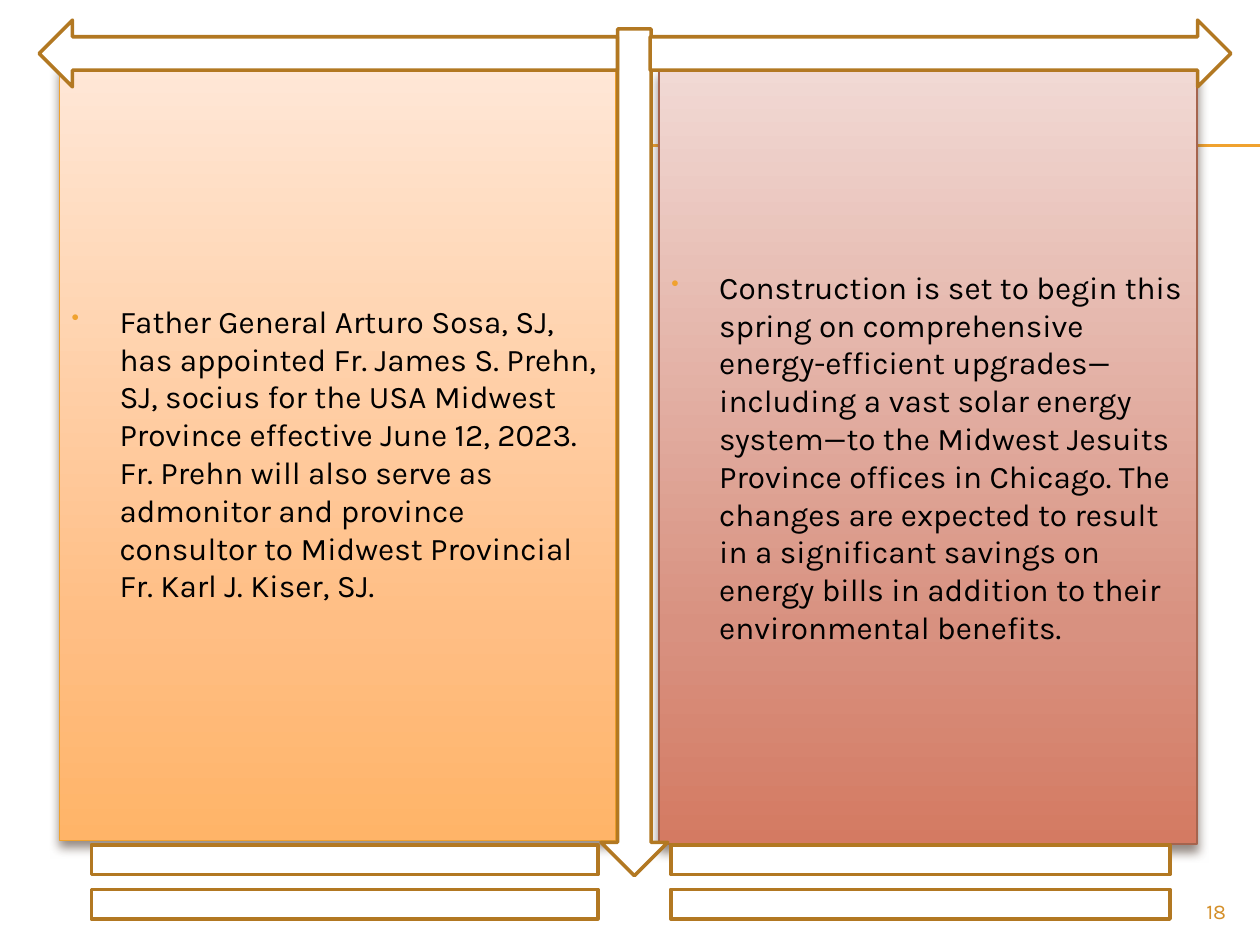
"""Build a two-column news slide framed by block arrows and equal signs."""
from dataclasses import dataclass

from lxml import etree
from pptx import Presentation
from pptx.dml.color import RGBColor
from pptx.enum.shapes import MSO_CONNECTOR, MSO_SHAPE
from pptx.enum.text import MSO_ANCHOR, PP_ALIGN
from pptx.oxml.ns import qn
from pptx.util import Emu, Inches, Pt

RECTANGLE = MSO_SHAPE.RECTANGLE
DOWN_ARROW = MSO_SHAPE.DOWN_ARROW
RIGHT_ARROW = MSO_SHAPE.RIGHT_ARROW
LEFT_ARROW = MSO_SHAPE.LEFT_ARROW
EQUAL_SIGN = MSO_SHAPE.MATH_EQUAL
STRAIGHT = MSO_CONNECTOR.STRAIGHT
MIDDLE = MSO_ANCHOR.MIDDLE
LEFT, RIGHT = PP_ALIGN.LEFT, PP_ALIGN.RIGHT

COLUMNS, ROWS = 100, 75
CELL = Inches(0.1)


@dataclass(frozen=True)
class Theme:
    font: str = "Karla"
    body_size: float = 18
    number_size: float = 12
    text: str = "000000"
    accent: str = "F0A22E"
    number: str = "D48F29"
    frame_fill: str = "FFFFFF"
    frame_line: str = "B27822"
    shadow: str = "4E3B30"
    rule_width: float = 0.75
    panel_width: float = 0.79
    frame_width: float = 2


@dataclass(frozen=True)
class Box:
    column: float
    row: float
    columns: float
    rows: float

    def emu(self) -> list[Emu]:
        return [cells(n) for n in (self.column, self.row, self.columns, self.rows)]


@dataclass(frozen=True)
class Panel:
    box: Box
    gradient: tuple[str, str, str]
    line: str
    story: str


@dataclass(frozen=True)
class Ornament:
    kind: MSO_SHAPE
    box: Box


THEME = Theme()
GRADIENT_STOPS = (0, 72, 100)
RULE_START = 5.6
RULE_ROWS = (11.5, 11.6)
HANGING = 3.8
NUMBER_BOX = Box(90, 70.8, 8.3, 2.7)

PANELS = (
    Panel(
        Box(4.7, 5.2, 44.2, 61.5),
        ("FFE7D7", "FFBE84", "FFB468"),
        THEME.accent,
        "Father General Arturo Sosa, SJ, has appointed Fr. James S. Prehn, SJ, "
        "socius for the USA Midwest Province effective June 12, 2023. Fr. Prehn "
        "will also serve as admonitor and province consultor to Midwest "
        "Provincial Fr. Karl J. Kiser, SJ.",
    ),
    Panel(
        Box(52.3, 5.5, 42.7, 61.5),
        ("F1D9D4", "D89180", "D47A62"),
        "A5644E",
        "Construction is set to begin this spring on comprehensive "
        "energy-efficient upgrades—including a vast solar energy system—to the "
        "Midwest Jesuits Province offices in Chicago. The changes are expected "
        "to result in a significant savings on energy bills in addition to "
        "their environmental benefits.",
    ),
)

ORNAMENTS = (
    Ornament(DOWN_ARROW, Box(47.7, 2.3, 5.3, 67.2)),
    Ornament(RIGHT_ARROW, Box(51.6, 1.6, 46.1, 5.3)),
    Ornament(LEFT_ARROW, Box(3.1, 1.6, 45.9, 5.3)),
    Ornament(EQUAL_SIGN, Box(0, 65, 54.7, 10)),
    Ornament(EQUAL_SIGN, Box(46.1, 65, 53.9, 10)),
)


def cells(count: float) -> Emu:
    """Convert a number of grid cells to a length."""
    return Emu(round(count * CELL))


def add_node(parent, tag: str, **attributes):
    """Append a DrawingML element with the given attributes."""
    values = {key: str(value) for key, value in attributes.items()}
    return etree.SubElement(parent, qn(f"a:{tag}"), values)


def add_color(parent, color: str):
    """Append an RGB colour element."""
    return add_node(parent, "srgbClr", val=color)


def outline(shape, color: str, width: float) -> None:
    """Give a shape or connector a solid line."""
    shape.line.color.rgb = RGBColor.from_string(color)
    shape.line.width = Pt(width)


def add_text(paragraph, text: str, size: float, color: str) -> None:
    """Add one run in the theme font."""
    run = paragraph.add_run()
    run.text = text
    run.font.name = THEME.font
    run.font.size = Pt(size)
    run.font.color.rgb = RGBColor.from_string(color)


def fill_gradient(shape, colors: tuple[str, str, str]) -> None:
    """Fill a shape from top to bottom with the three colours."""
    shape.fill.gradient()
    shape.fill.gradient_angle = 270
    stops = shape._element.spPr.find(qn("a:gradFill")).find(qn("a:gsLst"))
    for stop in list(stops):
        stops.remove(stop)
    for position, color in zip(GRADIENT_STOPS, colors):
        add_color(add_node(stops, "gs", pos=position * 1000), color)


def cast_shadow(shape) -> None:
    """Drop a soft shadow straight down."""
    shape.shadow.inherit = False
    effects = shape._element.spPr.find(qn("a:effectLst"))
    shadow = add_node(effects, "outerShdw", blurRad=Pt(6), dist=Pt(4),
                      dir=5400000, rotWithShape=0)
    add_node(add_color(shadow, THEME.shadow), "alpha", val=60000)


def add_bullet(paragraph) -> None:
    """Hang the paragraph behind a small accent bullet."""
    properties = paragraph._p.get_or_add_pPr()
    properties.set("marL", str(cells(HANGING)))
    properties.set("indent", str(-cells(HANGING)))
    add_color(add_node(properties, "buClr"), THEME.accent)
    add_node(properties, "buSzPct", val=70000)
    add_node(properties, "buChar", char="•")


def draw_rule(slide, row: float) -> None:
    """Draw a thin rule that runs to the right edge."""
    rule = slide.shapes.add_connector(
        STRAIGHT, cells(RULE_START), cells(row), cells(COLUMNS), cells(row))
    outline(rule, THEME.accent, THEME.rule_width)
    add_node(rule._element.spPr, "effectLst")


def draw_panel(slide, panel: Panel) -> None:
    """Draw a gradient panel with its bulleted story."""
    shape = slide.shapes.add_shape(RECTANGLE, *panel.box.emu())
    fill_gradient(shape, panel.gradient)
    outline(shape, panel.line, THEME.panel_width)
    cast_shadow(shape)
    frame = shape.text_frame
    frame.word_wrap = True
    frame.vertical_anchor = MIDDLE
    paragraph = frame.paragraphs[0]
    paragraph.alignment = LEFT
    paragraph.space_before = Pt(0.2 * THEME.body_size)
    add_bullet(paragraph)
    add_text(paragraph, panel.story, THEME.body_size, THEME.text)


def draw_ornament(slide, ornament: Ornament) -> None:
    """Draw a white outlined arrow or equal sign."""
    shape = slide.shapes.add_shape(ornament.kind, *ornament.box.emu())
    shape.shadow.inherit = False
    shape.fill.solid()
    shape.fill.fore_color.rgb = RGBColor.from_string(THEME.frame_fill)
    outline(shape, THEME.frame_line, THEME.frame_width)


def draw_slide_number(slide, number: str) -> None:
    """Write the slide number at the lower right."""
    frame = slide.shapes.add_textbox(*NUMBER_BOX.emu()).text_frame
    frame.word_wrap = True
    frame.paragraphs[0].alignment = RIGHT
    add_text(frame.paragraphs[0], number, THEME.number_size, THEME.number)


def main() -> None:
    """Assemble and save the slide."""
    deck = Presentation()
    deck.slide_width, deck.slide_height = cells(COLUMNS), cells(ROWS)
    slide = deck.slides.add_slide(deck.slide_layouts[6])
    for row in RULE_ROWS:
        draw_rule(slide, row)
    for panel in PANELS:
        draw_panel(slide, panel)
    for ornament in ORNAMENTS:
        draw_ornament(slide, ornament)
    draw_slide_number(slide, "18")
    deck.save("out.pptx")


if __name__ == "__main__":
    main()
